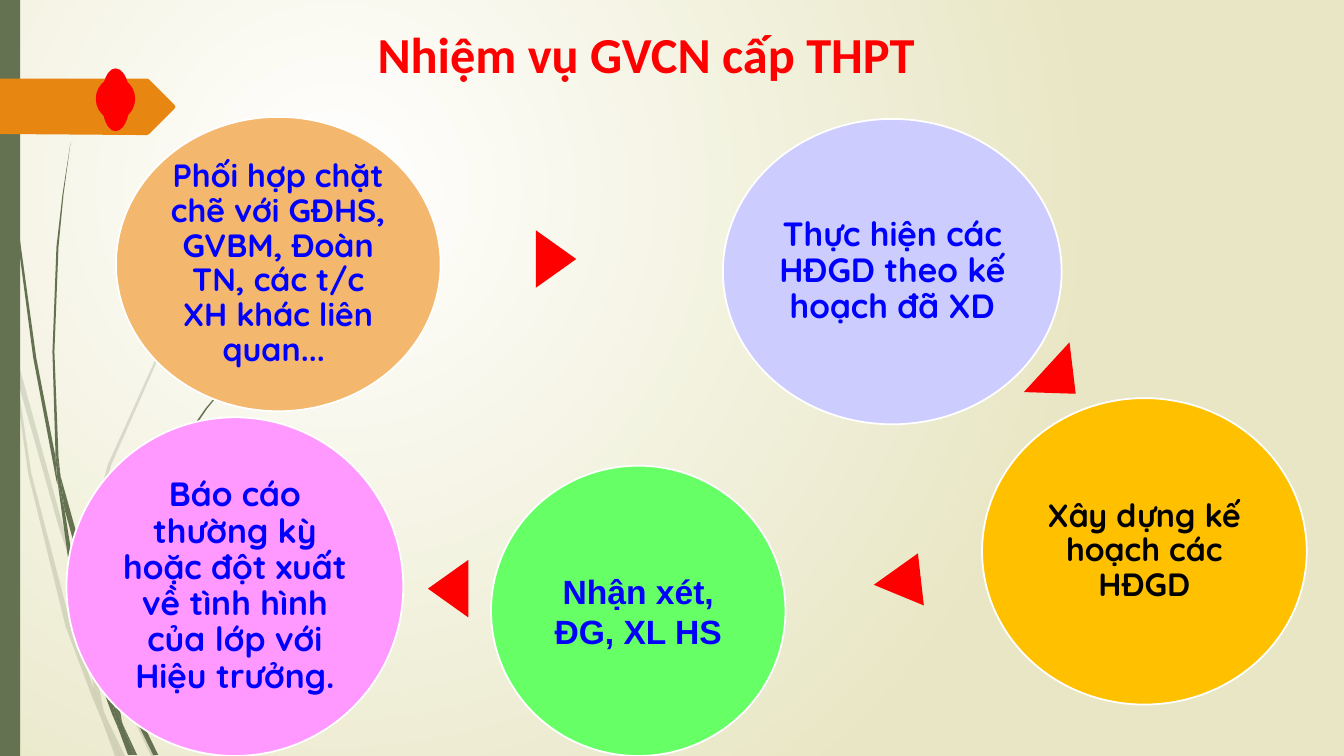
import dataclasses

import lxml.etree
import pptx
import pptx.dml.color
import pptx.enum.shapes
import pptx.enum.text
import pptx.oxml.ns
import pptx.util

Inches = pptx.util.Inches
Pt = pptx.util.Pt
RGBColor = pptx.dml.color.RGBColor
Kind = pptx.enum.shapes.MSO_SHAPE
qn = pptx.oxml.ns.qn

WHITE = RGBColor(0xFF, 0xFF, 0xFF)
BLACK = RGBColor(0, 0, 0)
RED = RGBColor(0xFF, 0, 0)
BLUE = RGBColor(0, 0, 0xFF)
CREAM = RGBColor(0xE8, 0xE6, 0xC4)
MOSS = RGBColor(0x64, 0x72, 0x52)
RUST = RGBColor(0xE7, 0x87, 0x12)
GOLD = RGBColor(0xFF, 0xC0, 0x00)
PEACH = RGBColor(0xF4, 0xB7, 0x6E)
GREEN = RGBColor(0x66, 0xFF, 0x66)
LILAC = RGBColor(0xCC, 0xCC, 0xFF)
PINK = RGBColor(0xFF, 0x99, 0xFF)

Box = tuple[float, float, float, float]
Points = tuple[tuple[float, float], ...]


@dataclasses.dataclass
class Duty:
    box: Box
    fill: RGBColor
    text: str
    size: int = 24
    font: str = "Quicksand"
    ink: RGBColor = BLUE
    gap: float = 0.9


@dataclasses.dataclass
class Arrow:
    box: Box
    turn: float


DUTIES = [
    Duty((9.74, 3.95, 3.22, 3.04), GOLD, "Xây dựng kế hoạch các HĐGD", 23, ink=BLACK),
    Duty((1.15, 1.16, 3.22, 2.92), PEACH,
         "Phối hợp chặt chẽ với GĐHS, GVBM, Đoàn TN, các t/c XH khác liên quan... ", 23),
    Duty((4.87, 4.62, 2.92, 2.88), GREEN, "Nhận xét, ĐG, XL HS", font="Arial", gap=1.0),
    Duty((7.17, 1.18, 3.36, 3.03), LILAC, "Thực hiện các HĐGD theo kế hoạch đã XD"),
    Duty((0.66, 4.14, 3.34, 3.36), PINK,
         "Báo cáo thường kỳ hoặc đột xuất về tình hình của lớp với Hiệu trưởng."),
]

ARROWS = [
    Arrow((10.19, 3.58, 0.67, 0.39), 132.5),
    Arrow((5.23, 2.37, 0.57, 0.4), 90),
    Arrow((8.64, 5.54, 0.52, 0.47), 263.5),
    Arrow((4.16, 5.64, 0.57, 0.4), 270),
]

BUDS: list[Box] = [
    (0.95, 0.77, 0.39, 0.42),
    (0.97, 0.8, 0.34, 0.37),
    (1.01, 0.68, 0.28, 0.62),
    (1.01, 0.68, 0.26, 0.62),
]

BANNER: Points = (
    (0, 0.78), (1.46, 0.78), (1.48, 0.79), (1.73, 1.04), (1.74, 1.06),
    (1.73, 1.08), (1.48, 1.33), (1.46, 1.34), (1.36, 1.34), (0, 1.33))

PALE: list[Points] = [
    ((0.11, 3.5), (0.09, 3.22), (0, 2.82), (0, 2.99), (0.1, 3.44)),
    ((0.58, 5.22), (0.84, 5.99), (0.85, 5.86), (0.62, 5.2), (0.14, 3.45), (0.17, 3.76)),
    ((0.92, 6.07), (0.88, 5.96), (0.88, 6.1), (1.23, 6.94), (1.5, 7.5), (1.55, 7.5),
     (1.27, 6.92)),
    ((1.19, 7.5), (1.24, 7.5), (1.05, 7.11)),
    ((0.93, 6.83), (0.7, 6.19), (0.31, 4.69), (0.17, 3.76), (0.11, 3.5), (0.28, 4.7),
     (0.65, 6.21), (0.92, 6.93), (1.01, 7.14), (0.99, 7.07)),
    ((0.84, 5.99), (0.87, 6.46), (0.93, 6.83), (0.96, 6.92), (1.05, 7.11), (1.03, 7.06),
     (0.91, 6.46), (0.88, 6.1), (0.88, 6.08)),
    ((0.88, 5.84), (0.95, 5.2), (1.1, 4.62), (1.6, 3.49), (2.29, 2.45), (2.68, 1.98),
     (3.12, 1.54), (3.12, 1.53), (2.68, 1.97), (2.28, 2.44), (1.58, 3.48), (1.07, 4.61),
     (0.91, 5.2), (0.85, 5.84), (0.88, 5.96)),
    ((1.01, 7.14), (1.14, 7.5), (1.19, 7.5)),
    ((0.88, 6.08), (0.88, 5.96), (0.85, 5.86), (0.84, 5.99)),
    ((0.96, 6.92), (0.93, 6.83), (0.99, 7.07), (1.01, 7.14), (1.19, 7.5), (1.05, 7.11)),
]

DARK: list[Points] = [
    ((0.07, 1.1), (0.17, 2.33), (0.33, 3.55), (0.56, 4.77), (0.57, 4.81), (0.55, 4.53),
     (0.36, 3.55), (0.19, 2.32), (0.08, 1.09), (0.04, 0), (0.03, 0), (0.04, 0.48)),
    ((0.88, 5.92), (1.06, 6.45), (1.06, 6.31), (0.93, 5.9), (0.6, 4.72), (0.64, 5.05)),
    ((1.13, 6.49), (1.1, 6.41), (1.11, 6.56), (1.32, 7.08), (1.52, 7.49), (1.57, 7.49),
     (1.36, 7.06)),
    ((1.1, 6.91), (0.98, 6.57), (0.72, 5.56), (0.64, 5.05), (0.57, 4.77), (0.68, 5.57),
     (0.93, 6.59), (1.11, 7.08), (1.17, 7.22), (1.16, 7.17)),
    ((0.6, 4.72), (0.58, 4.53), (0.54, 3.49), (0.58, 2.45), (0.63, 1.93), (0.7, 1.41),
     (0.62, 1.93), (0.56, 2.45), (0.52, 3.49), (0.55, 4.49)),
    ((1.33, 7.49), (1.36, 7.49), (1.22, 7.19)),
    ((0.57, 4.77), (0.64, 5.05), (0.6, 4.72), (0.55, 4.49), (0.55, 4.53)),
    ((1.11, 6.33), (1.16, 5.88), (1.25, 5.52), (1.58, 4.76), (2.05, 4.06), (2.31, 3.74),
     (2.61, 3.44), (2.6, 3.44), (2.31, 3.73), (2.04, 4.05), (1.56, 4.74), (1.22, 5.51),
     (1.12, 5.87), (1.06, 6.31), (1.1, 6.41)),
    ((1.17, 7.22), (1.27, 7.49), (1.31, 7.49)),
    ((1.06, 6.45), (1.1, 6.91), (1.16, 7.06), (1.22, 7.19), (1.21, 7.16), (1.11, 6.56)),
    ((1.06, 6.45), (1.11, 6.56), (1.1, 6.41), (1.06, 6.31)),
    ((1.16, 7.06), (1.1, 6.91), (1.17, 7.22), (1.3, 7.49), (1.33, 7.49), (1.22, 7.19)),
]


def paint(shape, fill: RGBColor) -> None:
    shape.shadow.inherit = False
    shape.fill.solid()
    shape.fill.fore_color.rgb = fill
    shape.line.fill.background()


def add_form(slide, kind, box: Box, fill: RGBColor):
    shape = slide.shapes.add_shape(kind, *map(Inches, box))
    paint(shape, fill)
    return shape


def trace(slide, points: Points, fill: RGBColor):
    """Draw a closed outline through points given in inches."""
    start, *rest = [(Inches(x), Inches(y)) for x, y in points]
    pen = slide.shapes.build_freeform(*start)
    pen.add_line_segments(rest, close=True)
    shape = pen.convert_to_shape()
    paint(shape, fill)
    return shape


def fade(shape, part: int) -> None:
    """Set the opacity of a solid fill, in percent."""
    tone = shape._element.spPr.find(qn("a:solidFill"))[0]
    lxml.etree.SubElement(tone, qn("a:alpha"), val=str(part * 1000))


def write(frame, text: str, font: str, size: int, ink: RGBColor, gap: float = 1.0) -> None:
    frame.word_wrap = True
    para = frame.paragraphs[0]
    para.alignment = pptx.enum.text.PP_ALIGN.CENTER
    para.line_spacing = gap
    run = para.add_run()
    run.text = text
    run.font.name = font
    run.font.size = Pt(size)
    run.font.bold = True
    run.font.color.rgb = ink


def add_duty(slide, duty: Duty) -> None:
    disc = add_form(slide, Kind.OVAL, duty.box, duty.fill)
    disc.line.color.rgb = WHITE
    disc.line.width = Pt(1.25)
    frame = disc.text_frame
    frame.vertical_anchor = pptx.enum.text.MSO_ANCHOR.MIDDLE
    frame.margin_left = frame.margin_right = Inches(0.03)
    frame.margin_top = frame.margin_bottom = Inches(0.03)
    write(frame, duty.text, duty.font, duty.size, duty.ink, duty.gap)


def add_glow(slide) -> None:
    """Fill the background with a round gradient, white to cream."""
    fill = slide.background.fill
    fill.gradient()
    for stop, tone in zip(fill.gradient_stops, (WHITE, CREAM)):
        stop.color.rgb = tone
    line = next(slide._element.iter(qn("a:lin")))
    ring = lxml.etree.Element(qn("a:path"), path="circle")
    lxml.etree.SubElement(ring, qn("a:fillToRect"),
                          l="50000", t="50000", r="100000", b="100000")
    line.getparent().replace(line, ring)


def main() -> None:
    deck = pptx.Presentation()
    deck.slide_width, deck.slide_height = Inches(13.33), Inches(7.5)
    slide = deck.slides.add_slide(deck.slide_layouts[6])
    add_glow(slide)
    for blade in PALE:
        fade(trace(slide, blade, MOSS), 20)
    for blade in DARK:
        trace(slide, blade, MOSS)
    add_form(slide, Kind.RECTANGLE, (0, 0, 0.2, 7.5), MOSS)
    trace(slide, BANNER, RUST)
    title = slide.shapes.add_textbox(*map(Inches, (1.66, 0.18, 9.5, 0.75)))
    write(title.text_frame, "Nhiệm vụ GVCN cấp THPT", "Calibri", 36, RED)
    for bud in BUDS:
        add_form(slide, Kind.OVAL, bud, RED)
    for duty in DUTIES:
        add_duty(slide, duty)
    for arrow in ARROWS:
        add_form(slide, Kind.ISOSCELES_TRIANGLE, arrow.box, RED).rotation = arrow.turn
    deck.save("out.pptx")


if __name__ == "__main__":
    main()
